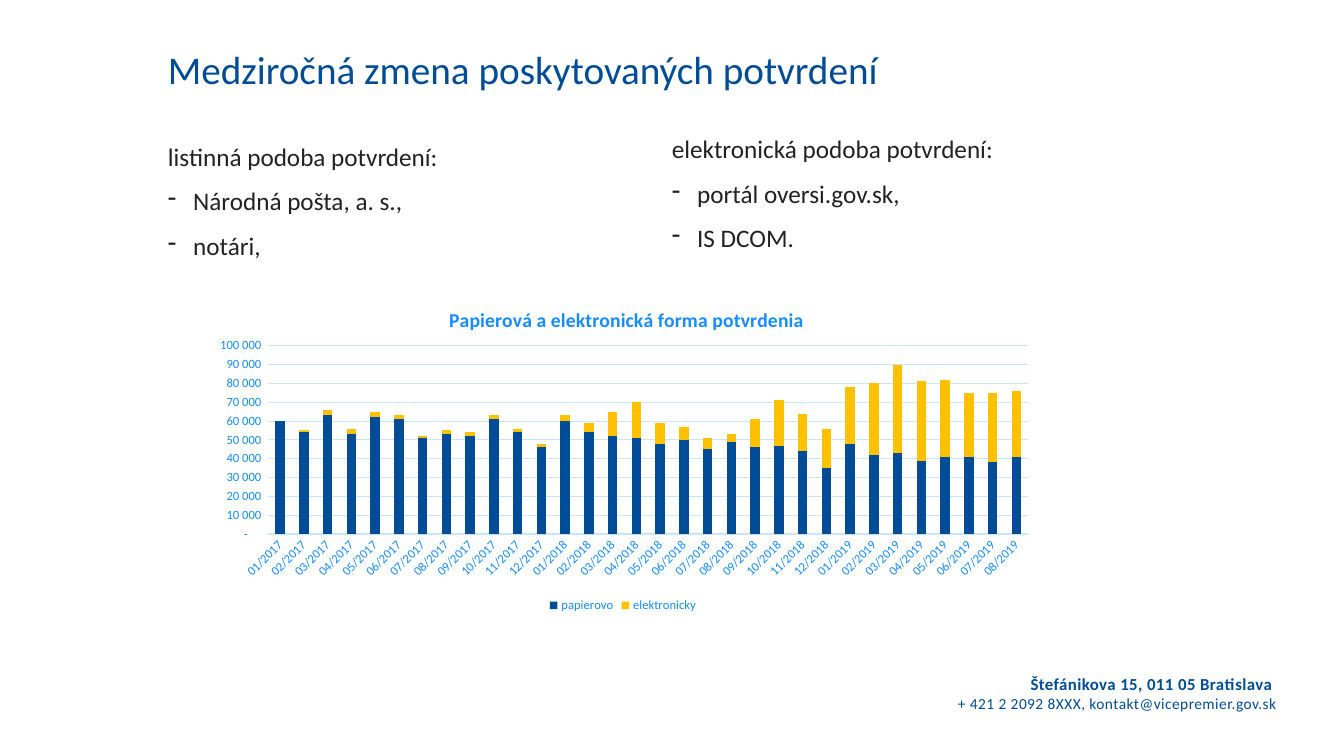
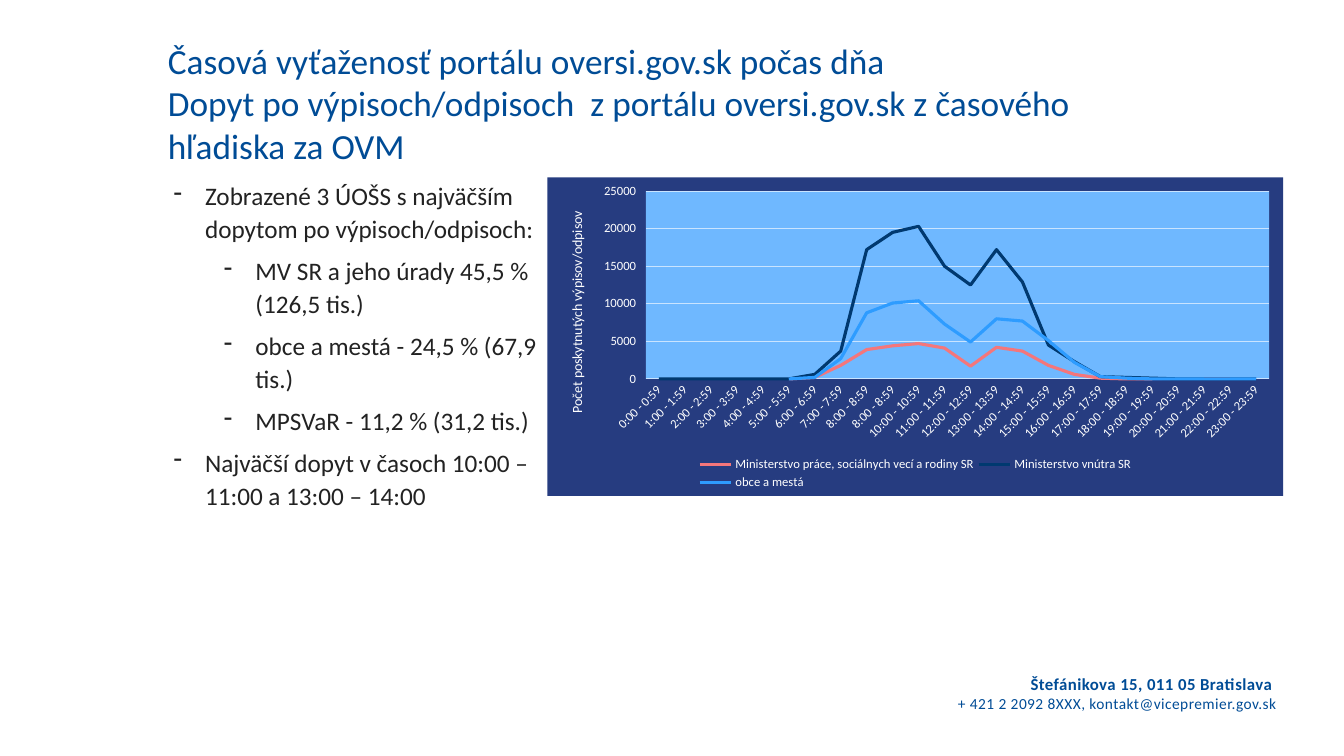
from dataclasses import dataclass
from typing import Optional

from pptx import Presentation
from pptx.chart import data as chart_data
from pptx.dml.color import RGBColor
from pptx.enum import chart as chart_enum, text
from pptx.oxml import parse_xml
from pptx.oxml.ns import nsdecls
from pptx.util import Pt

FONT = "Calibri"
COLORS = {
    "blue": "004C96", "ink": "222222", "sky": "158CFF", "grid": "C9E4FF",
    "gold": "FFC000", "white": "FFFFFF", "panel": "263C80", "plot": "6FB8FF",
    "coral": "F4767B", "navy": "003970", "azure": "2E9CFF",
}


@dataclass(frozen=True)
class Area:
    """Position and size in points, or as fractions inside a chart."""
    left: float
    top: float
    width: float
    height: float

    def lengths(self) -> tuple:
        return Pt(self.left), Pt(self.top), Pt(self.width), Pt(self.height)


@dataclass(frozen=True)
class Line:
    words: str
    size: float = 18
    color: str = "ink"
    bold: bool = False
    indent: float = 0
    hanging: float = 0
    tracking: float = 0


@dataclass(frozen=True)
class Series:
    name: str
    values: tuple
    color: str


@dataclass(frozen=True)
class ChartStyle:
    kind: chart_enum.XL_CHART_TYPE
    area: Area
    plot: Area
    text_color: str
    maximum: int
    step: int
    number_format: str
    value_tick: chart_enum.XL_TICK_MARK
    fill: Optional[str] = None
    plot_fill: Optional[str] = None


def rgb(name: str) -> RGBColor:
    return RGBColor.from_string(COLORS[name])


def style_font(font, size: float, color: str, bold: bool = False) -> None:
    font.name = FONT
    font.size = Pt(size)
    font.bold = bold
    font.color.rgb = rgb(color)


def add_text(page, area: Area, lines: list[Line], spacing: float = 1,
             before: float = 0, align=text.PP_ALIGN.LEFT):
    """Add a text box without margins; a hanging indent gets a dash."""
    frame = page.shapes.add_textbox(*area.lengths()).text_frame
    frame.word_wrap = True
    frame.margin_left = frame.margin_right = 0
    frame.margin_top = frame.margin_bottom = 0
    for index, line in enumerate(lines):
        para = frame.add_paragraph() if index else frame.paragraphs[0]
        para.text = line.words
        para.alignment = align
        if line.hanging:
            props = para._p.get_or_add_pPr()
            props.set("marL", str(Pt(line.indent)))
            props.set("indent", str(-Pt(line.hanging)))
            props.append(parse_xml(f'<a:buChar {nsdecls("a")} char="-"/>'))
        para.line_spacing = spacing
        if index:
            para.space_before = Pt(before)
        for span in para.runs:
            style_font(span.font, line.size, line.color, line.bold)
            if line.tracking:
                span._r.get_or_add_rPr().set("spc", str(int(line.tracking * 100)))
    return frame


def add_page(deck, title: list[str], title_top: float, title_size: float):
    """Add a blank page with the shared title and contact footer."""
    page = deck.slides.add_slide(deck.slide_layouts[6])
    footer = add_text(page, Area(545, 480.5, 367, 29), [
        Line("Štefánikova 15, 011 05 Bratislava ", 12, "blue", True, tracking=0.3),
        Line("+ 421 2 2092 8XXX, kontakt@vicepremier.gov.sk", 11, "blue", tracking=0.3),
    ], align=text.PP_ALIGN.RIGHT)
    footer.vertical_anchor = text.MSO_ANCHOR.MIDDLE
    add_text(page, Area(120, title_top, 720, 59),
             [Line(words, title_size, "blue") for words in title])
    return page


def shape_props(fill: Optional[str]):
    paint = (f'<a:solidFill><a:srgbClr val="{COLORS[fill]}"/></a:solidFill>'
             if fill else "<a:noFill/>")
    return parse_xml(f'<c:spPr {nsdecls("c", "a")}>{paint}'
                     "<a:ln><a:noFill/></a:ln></c:spPr>")


def set_layout(element, index: int, area: Area, sized: bool = True,
               inner: bool = False) -> None:
    """Give a chart part a fixed place, as fractions of the chart."""
    for old in element.xpath("./c:layout"):
        element.remove(old)
    parts = ['<c:layoutTarget val="inner"/>'] if inner else []
    parts += ['<c:xMode val="edge"/>', '<c:yMode val="edge"/>',
              f'<c:x val="{area.left}"/>', f'<c:y val="{area.top}"/>']
    if sized:
        parts += [f'<c:w val="{area.width}"/>', f'<c:h val="{area.height}"/>']
    element.insert(index, parse_xml(
        f'<c:layout {nsdecls("c")}><c:manualLayout>{"".join(parts)}'
        "</c:manualLayout></c:layout>"))


def rotate_text(chart, where: str, degrees: int) -> None:
    for body in chart.element.xpath(f"{where}//a:bodyPr"):
        body.set("rot", str(degrees * 60000))
        body.set("vert", "horz")


def add_styled_chart(page, style: ChartStyle, categories: list[str],
                     series: list[Series]):
    content = chart_data.CategoryChartData()
    content.categories = categories
    for item in series:
        content.add_series(item.name, item.values)
    chart = page.shapes.add_chart(style.kind, *style.area.lengths(), content).chart
    style_font(chart.font, 10, style.text_color)
    chart.has_title = False

    chart.has_legend = True
    chart.legend.position = chart_enum.XL_LEGEND_POSITION.BOTTOM
    chart.legend.include_in_layout = False
    style_font(chart.legend.font, 9, style.text_color)

    across, upright = chart.category_axis, chart.value_axis
    for axis, tick in ((across, chart_enum.XL_TICK_MARK.NONE),
                       (upright, style.value_tick)):
        axis.major_tick_mark = tick
        axis.minor_tick_mark = chart_enum.XL_TICK_MARK.NONE
        style_font(axis.tick_labels.font, 9, style.text_color)
    rotate_text(chart, "//c:catAx/c:txPr", -45)
    upright.minimum_scale = 0
    upright.maximum_scale = style.maximum
    upright.major_unit = style.step
    upright.tick_labels.number_format = style.number_format
    upright.tick_labels.number_format_is_linked = False
    upright.format.line.fill.background()
    upright.has_major_gridlines = True
    for line in (across.format.line, upright.major_gridlines.format.line):
        line.color.rgb = rgb("grid")
        line.width = Pt(0.75)

    plot = chart.plots[0]
    plot.vary_by_categories = False
    for drawn, item in zip(plot.series, series):
        if style.kind == chart_enum.XL_CHART_TYPE.LINE:
            drawn.smooth = False
            drawn.marker.style = chart_enum.XL_MARKER_STYLE.NONE
            drawn.format.line.color.rgb = rgb(item.color)
            drawn.format.line.width = Pt(2.25)
        else:
            drawn.format.fill.solid()
            drawn.format.fill.fore_color.rgb = rgb(item.color)

    plot_area = chart.element.xpath("//c:plotArea")[0]
    set_layout(plot_area, 0, style.plot, inner=True)
    plot_area.append(shape_props(style.plot_fill))
    chart.element.xpath("./c:chart")[0].addnext(shape_props(style.fill))
    return chart


def set_title(title, words: str, size: float, color: str, bold: bool) -> None:
    title.text_frame.text = words
    style_font(title.text_frame.paragraphs[0].runs[0].font, size, color, bold)


def add_yearly_change(deck) -> None:
    page = add_page(deck, ["Medziročná zmena poskytovaných potvrdení"], 32.5, 28)
    columns = (
        (120, 96.5, "listinná podoba potvrdení:", ("Národná pošta, a. s.,", "notári,")),
        (480, 91, "elektronická podoba potvrdení:",
         ("portál oversi.gov.sk,", "IS DCOM.")),
    )
    for left, top, heading, items in columns:
        lines = [Line(heading)] + [Line(item, indent=18, hanging=18) for item in items]
        add_text(page, Area(left, top, 260, 108), lines, 1.2, 6)

    months = [f"{month:02}/{year}" for year in (2017, 2018, 2019)
              for month in range(1, 13)][:32]
    style = ChartStyle(
        chart_enum.XL_CHART_TYPE.COLUMN_STACKED, Area(143.3, 204.5, 603.4, 236),
        Area(0.08, 0.18, 0.9, 0.57), "sky", 100000, 10000,
        '_-* #\\ ##0_-;\\-* #\\ ##0_-;_-* "-"??_-;_-', chart_enum.XL_TICK_MARK.NONE)
    chart = add_styled_chart(page, style, months, [
        Series("papierovo", (
            60000, 54000, 63000, 53000, 62000, 61000, 51000, 53000,
            52000, 61000, 54000, 46000, 60000, 54000, 52000, 51000,
            48000, 50000, 45000, 49000, 46000, 47000, 44000, 35000,
            48000, 42000, 43000, 39000, 41000, 41000, 38000, 41000), "blue"),
        Series("elektronicky", (
            0, 1000, 3000, 3000, 3000, 2000, 1000, 2000,
            2000, 2000, 2000, 2000, 3000, 5000, 13000, 19000,
            11000, 7000, 6000, 4000, 15000, 24000, 20000, 21000,
            30000, 38000, 47000, 42000, 41000, 34000, 37000, 35000), "gold"),
    ])
    chart.plots[0].gap_width = 150
    chart.plots[0].overlap = 100
    set_title(chart.chart_title, "Papierová a elektronická forma potvrdenia",
              14, "sky", True)
    set_layout(chart.element.xpath("./c:chart/c:title")[0], 1,
               Area(0.29, 0.05, 0, 0), sized=False)


def add_daily_load(deck) -> None:
    page = add_page(deck, [
        "Časová vyťaženosť portálu oversi.gov.sk počas dňa",
        "Dopyt po výpisoch/odpisoch  z portálu oversi.gov.sk z časového hľadiska za OVM",
    ], 28, 25.2)
    points = (
        (58.5, "Zobrazené 3 ÚOŠS s najväčším dopytom po výpisoch/odpisoch:"),
        (94.5, "MV SR a jeho úrady 45,5 % (126,5 tis.)"),
        (94.5, "obce a mestá - 24,5 % (67,9 tis.)"),
        (94.5, "MPSVaR - 11,2 % (31,2 tis.)"),
        (58.5, "Najväčší dopyt v časoch 10:00 – 11:00 a 13:00 – 14:00"),
    )
    add_text(page, Area(88, 126.7, 296, 257),
             [Line(words, indent=indent, hanging=22.5) for indent, words in points],
             1.1, 6)

    hours = [f"{hour}:00 - {hour}:59" for hour in (*range(9), 8, *range(10, 24))]
    style = ChartStyle(
        chart_enum.XL_CHART_TYPE.LINE, Area(391, 126.7, 525.6, 227.5),
        Area(0.134, 0.043, 0.847, 0.59), "white", 25000, 5000,
        "General", chart_enum.XL_TICK_MARK.OUTSIDE, "panel", "plot")
    chart = add_styled_chart(page, style, hours, [
        Series("Ministerstvo práce, sociálnych vecí a rodiny SR", (
            None, None, 0, None, None, 0, 200, 1800, 3900, 4400, 4700, 4100,
            1700, 4200, 3700, 1800, 600, 100, 0, 0, None, 0, 0, None), "coral"),
        Series("Ministerstvo vnútra SR", (
            0, 0, 0, 0, 0, 0, 600, 3700, 17200, 19500, 20300, 15000,
            12500, 17200, 12900, 4500, 2300, 300, 200, 100, 0, 0, 0, 0), "navy"),
        Series("obce a mestá", (
            None, None, None, None, None, 0, 200, 2700, 8800, 10100, 10400, 7300,
            4900, 8000, 7700, 5100, 2200, 300, 100, 0, 0, 0, 0, 0), "azure"),
    ])
    set_title(chart.value_axis.axis_title, "Počet poskytnutých výpisov/odpisov",
              10, "white", False)
    rotate_text(chart, "//c:valAx/c:title", -90)
    set_layout(chart.element.xpath("//c:legend")[0], 1, Area(0.2, 0.87, 0.6, 0.12))


def main() -> None:
    deck = Presentation()
    deck.slide_width, deck.slide_height = Pt(960), Pt(540)
    add_yearly_change(deck)
    add_daily_load(deck)
    deck.save("out.pptx")


if __name__ == "__main__":
    main()
